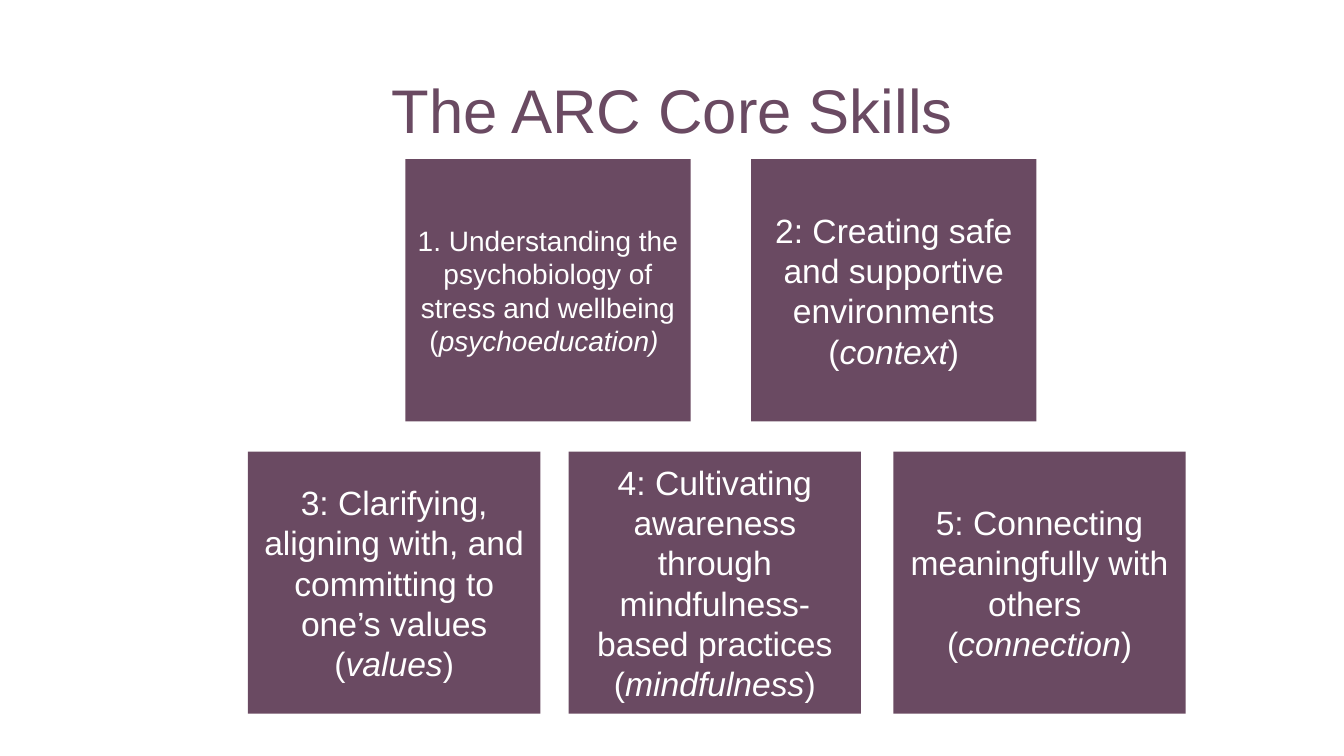
from pptx import Presentation
from pptx.dml.color import RGBColor
from pptx.enum.shapes import MSO_SHAPE as SHAPE
from pptx.enum.text import MSO_ANCHOR as ANCHOR, PP_ALIGN as ALIGN
from pptx.util import Pt

PX = 9144  # 100 px to the inch
PLUM, WHITE = "6A4A62", "FFFFFF"


def rgb(value):
    return RGBColor.from_string(value)


def add_text(sp, paragraphs, size, color, spacing=None):
    tf = sp.text_frame
    tf.word_wrap = True
    tf.vertical_anchor = ANCHOR.MIDDLE
    for i, runs in enumerate(paragraphs):
        p = tf.paragraphs[0] if i == 0 else tf.add_paragraph()
        p.alignment = ALIGN.CENTER
        p.line_spacing = spacing
        for text, italic in runs:
            r = p.add_run()
            r.text = text
            font = {"name": "Arial", "size": Pt(size), "italic": italic}
            for key, value in font.items():
                setattr(r.font, key, value)
            r.font.color.rgb = rgb(color)


prs = Presentation()
prs.slide_width, prs.slide_height = 1333 * PX, 750 * PX
s = prs.slides.add_slide(prs.slide_layouts[6])

# Skill boxes: left, top, width, text size, paragraphs of (text, italic)
TOP, BOTTOM, HEIGHT = 158, 448, 260
skills = [
    (402, TOP, 283, 20, [
        [("1. Understanding the psychobiology of stress and wellbeing (", False),
         ("psychoeducation) ", True)]]),
    (745, TOP, 283, 24, [
        [("2: Creating safe and supportive environments (", False),
         ("context", True), (")", False)]]),
    (246, BOTTOM, 290, 24, [
        [("3: Clarifying, aligning with, and committing to one’s values", False)],
        [("(", False), ("values", True), (")", False)]]),
    (564, BOTTOM, 290, 24, [
        [("4: Cultivating awareness through mindfulness-based practices (", False),
         ("mindfulness", True), (")", False)]]),
    (886, BOTTOM, 290, 24, [
        [("5: Connecting meaningfully with others ", False)],
        [("(", False), ("connection", True), (")", False)]]),
]
for left, top, width, size, paragraphs in skills:
    sp = s.shapes.add_shape(SHAPE.RECTANGLE, left * PX, top * PX, width * PX, HEIGHT * PX)
    sp.shadow.inherit = False
    sp.fill.solid()
    sp.fill.fore_color.rgb = rgb(PLUM)
    sp.line.fill.background()
    add_text(sp, paragraphs, size, WHITE)

# Title
title = s.shapes.add_textbox(92 * PX, 40 * PX, 1150 * PX, 145 * PX)
add_text(title, [[("The ARC Core Skills", False)]], 44, PLUM, 0.9)

prs.save("out.pptx")
